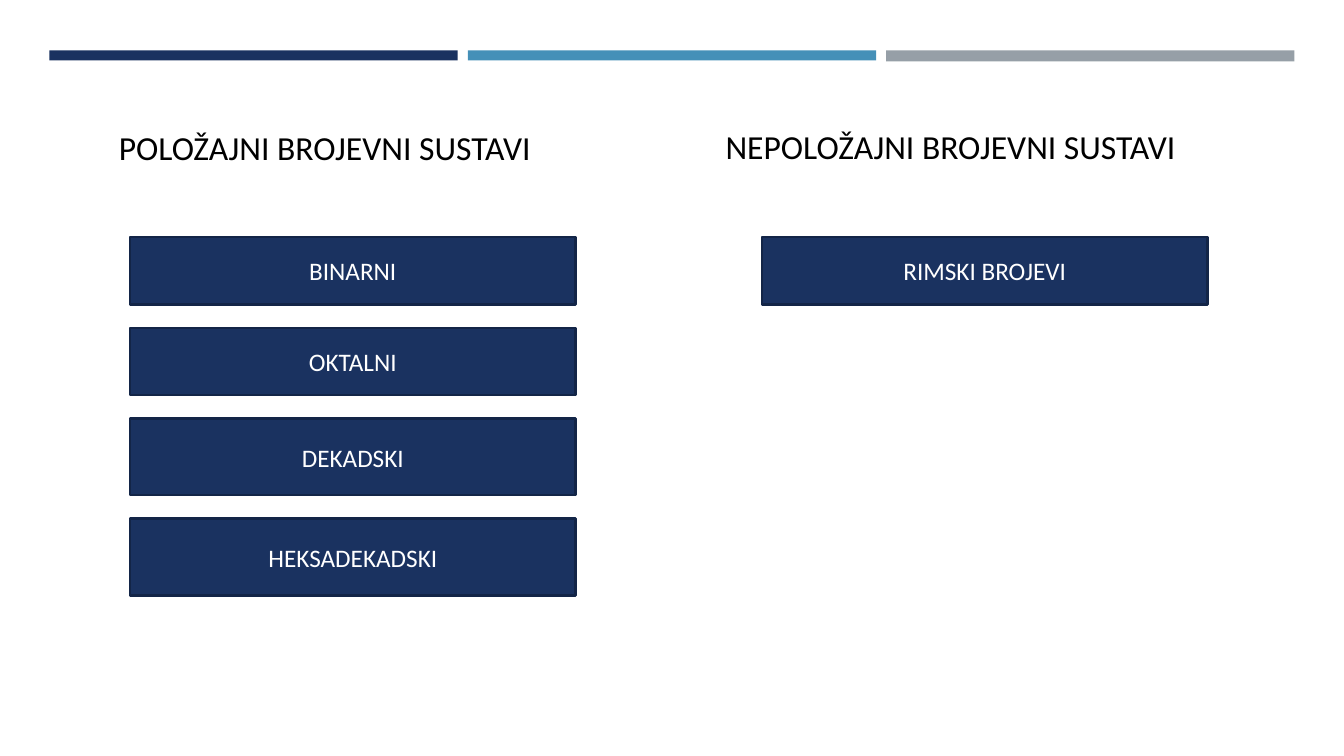
"""Builds a slide comparing positional and non-positional number systems."""
from pptx import Presentation
from pptx import util as u
from pptx.dml.color import RGBColor
from pptx.enum import shapes, text

NAVY = RGBColor(0x1A, 0x32, 0x60)
DARK_NAVY = RGBColor(0x13, 0x25, 0x47)
BLUE = RGBColor(0x45, 0x90, 0xB8)
GREY = RGBColor(0x96, 0x9F, 0xA7)
BLACK = RGBColor(0, 0, 0)
WHITE = RGBColor(0xFF, 0xFF, 0xFF)
FONT = "Calibri"
WIDTH, HEIGHT = u.Inches(13.33), u.Inches(7.5)
COL, ROW = WIDTH / 100, HEIGHT / 100
BUTTON_TOP, BUTTON_WIDTH, BUTTON_GAP = 31.33, 33.15, 3.1
LOW, TALL = 8.93, 10.13


def place(x, y, w, h):
    """Turn grid columns and rows into slide lengths."""
    return int(x * COL), int(y * ROW), int(w * COL), int(h * ROW)


def write(sp, words, size, color, align):
    """Put one styled line of text into a shape."""
    tf = sp.text_frame
    tf.word_wrap = True
    tf.text = words
    p = tf.paragraphs[0]
    p.alignment = align
    font = p.runs[0].font
    font.name, font.size = FONT, u.Pt(size)
    font.color.rgb = color


def add_rect(s, box, fill):
    """Add a flat rectangle without an outline."""
    sp = s.shapes.add_shape(shapes.MSO_SHAPE.RECTANGLE, *place(*box))
    sp.shadow.inherit = False
    sp.fill.solid()
    sp.fill.fore_color.rgb = fill
    sp.line.fill.background()
    return sp


def add_bars(s, x, y, w, gap):
    """Add the three coloured bars across the top."""
    for i, (fill, h) in enumerate([(NAVY, 1.33), (BLUE, 1.33), (GREY, 1.47)]):
        add_rect(s, (x + i * (w + gap), y, w, h), fill)


def add_button(s, box, label):
    """Add an outlined box naming one number system."""
    sp = add_rect(s, box, NAVY)
    sp.line.color.rgb = DARK_NAVY
    sp.line.width = u.Pt(1.75)
    sp.text_frame.vertical_anchor = text.MSO_ANCHOR.MIDDLE
    write(sp, label, 18, WHITE, text.PP_ALIGN.CENTER)


def add_systems(s, box, title, inset, systems):
    """Add a heading and the stack of number systems below it."""
    x, y, w, h = box
    heading = s.shapes.add_textbox(*place(x, y, w, h))
    write(heading, title, 24, BLACK, text.PP_ALIGN.LEFT)
    top = BUTTON_TOP
    for label, height in systems:
        add_button(s, (x + inset, top, BUTTON_WIDTH, height), label)
        top += height + BUTTON_GAP


def main():
    """Build and save the slide."""
    prs = Presentation()
    prs.slide_width, prs.slide_height = WIDTH, HEIGHT
    s = prs.slides.add_slide(prs.slide_layouts[6])
    add_bars(s, 3.68, 6.67, 30.38, 0.75)
    add_systems(s, (8.1, 16.13, 36.53, 12.13), "POLOŽAJNI BROJEVNI SUSTAVI", 1.58,
                [("BINARNI", LOW), ("OKTALNI", LOW),
                 ("DEKADSKI", TALL), ("HEKSADEKADSKI", TALL)])
    add_systems(s, (53.25, 16, 40.05, 6.67), "NEPOLOŽAJNI BROJEVNI SUSTAVI", 3.45,
                [("RIMSKI BROJEVI", LOW)])
    prs.save("out.pptx")


if __name__ == "__main__":
    main()
